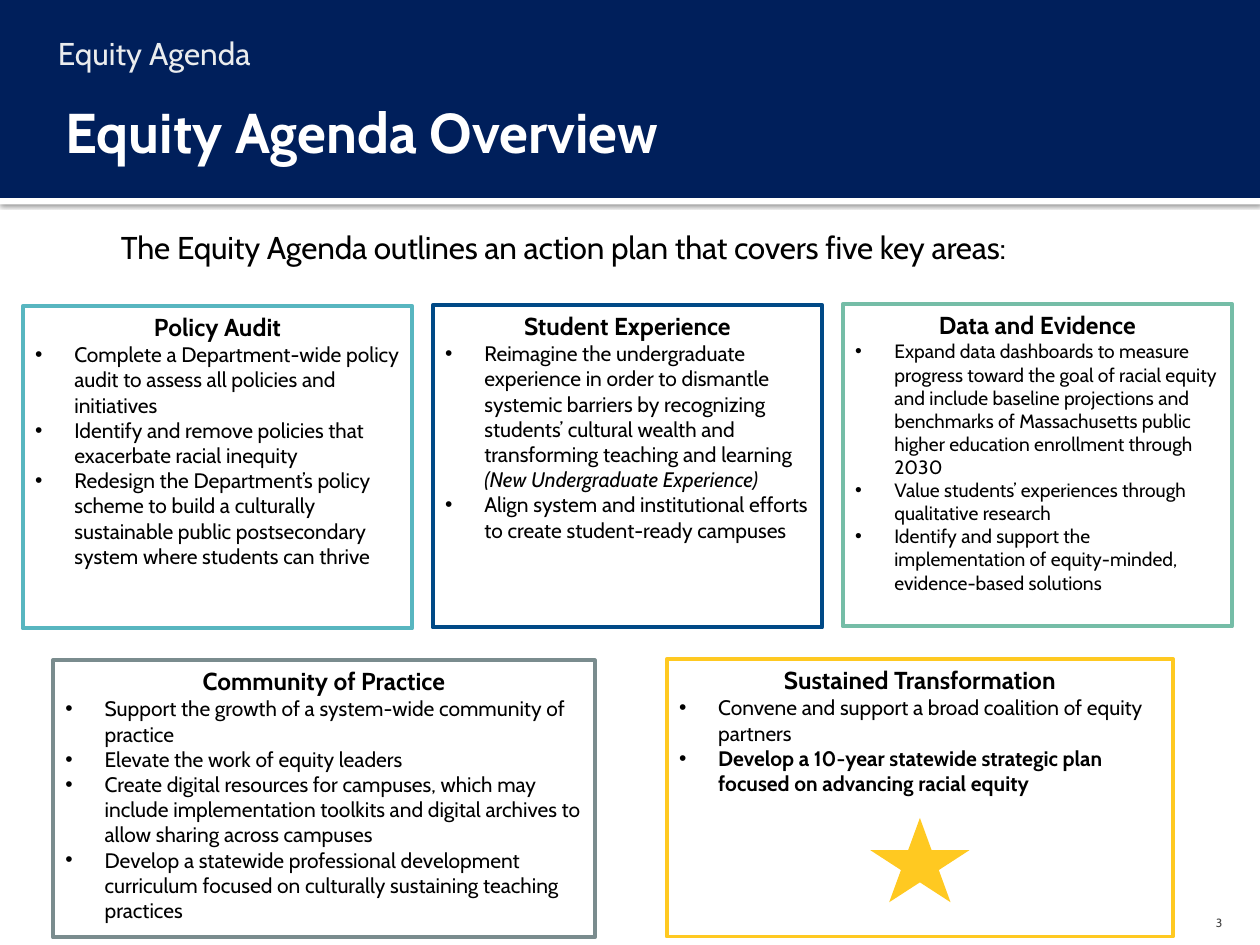
import dataclasses

import pptx
import pptx.dml.color
import pptx.enum.shapes
import pptx.enum.text
import pptx.oxml
import pptx.oxml.ns
import pptx.util

Cm = pptx.util.Cm
Pt = pptx.util.Pt
Shape = pptx.enum.shapes.MSO_SHAPE
Align = pptx.enum.text.PP_ALIGN
Anchor = pptx.enum.text.MSO_ANCHOR


@dataclasses.dataclass(frozen=True)
class Theme:
    """Colours, font and type sizes of the slide."""
    font: str = "Cabin"
    navy: str = "001F5B"
    white: str = "FFFFFF"
    black: str = "000000"
    pale: str = "EAECEE"
    dark: str = "454545"
    teal: str = "58B6C0"
    blue: str = "004986"
    green: str = "75BDA7"
    gray: str = "7A8C8E"
    gold: str = "FFC921"
    title: float = 32
    lead: float = 18
    head: float = 14
    body: float = 12
    small: float = 11
    tiny: float = 6.8


THEME = Theme()


def rgb(code):
    """Turn a hex code into a colour."""
    return pptx.dml.color.RGBColor.from_string(code)


def make(tag, parent, **attrs):
    """Add a drawing element with attributes to a parent."""
    node = parent.makeelement(pptx.oxml.ns.qn(tag), attrs)
    parent.append(node)
    return node


def write(frame, text, size=THEME.body, color=THEME.black, bold=False,
          italic=False, align=Align.LEFT, bullet=False, indent=0, before=0,
          space=0, join=False):
    """Add text to a frame as a new paragraph, or join it to the last one."""
    para = frame.paragraphs[-1]
    if para.runs and not join:
        para = frame.add_paragraph()
    if not join:
        para.alignment = align
        para.space_before = Pt(before)
        props = para._p.get_or_add_pPr()
        props.set("marL", str(Cm(0.79 if bullet else indent)))
        props.set("indent", str(Cm(-0.79 if bullet else 0)))
        if bullet:
            make("a:buFont", props, typeface="Arial")
            make("a:buChar", props, char="•")
    run = para.add_run()
    run.text = text
    font = run.font
    font.name, font.size = THEME.font, Pt(size)
    font.bold, font.italic = bold, italic
    font.color.rgb = rgb(color)
    if space:
        run._r.get_or_add_rPr().set("spc", str(round(space * 100)))


def shape(slide, kind, box, fill=None, line=None):
    """Draw a preset shape with a flat fill or an outline."""
    item = slide.shapes.add_shape(kind, *map(Cm, box))
    item.shadow.inherit = False
    if fill:
        item.fill.solid()
        item.fill.fore_color.rgb = rgb(fill)
    else:
        item.fill.background()
    if line:
        item.line.color.rgb = rgb(line)
        item.line.width = Pt(2.25)
    else:
        item.line.fill.background()
    return item


def label(slide, box, text, inset=(0.15, 0.25, 0.25, 0.13),
          anchor=Anchor.TOP, **form):
    """Place one line of text in its own box."""
    frame = slide.shapes.add_textbox(*map(Cm, box)).text_frame
    frame.word_wrap = True
    frame.vertical_anchor = anchor
    (frame.margin_left, frame.margin_top,
     frame.margin_right, frame.margin_bottom) = map(Cm, inset)
    write(frame, text, **form)


def banner(slide, box):
    """Draw the top band with its shadowed rule, section name and title."""
    left, top, width, height = box
    rule = shape(slide, Shape.RECTANGLE, (left, top + height, width, 0.13), THEME.white)
    effect = rule._element.spPr.find(pptx.oxml.ns.qn("a:effectLst"))
    cast = make("a:outerShdw", effect, blurRad=str(Pt(2.5)), dist=str(Pt(0.8)),
                dir="5400000", rotWithShape="0")
    make("a:alpha", make("a:srgbClr", cast, val=THEME.black), val="60000")
    shape(slide, Shape.RECTANGLE, box, THEME.navy)
    label(slide, (left + 0.84, top + 0.43, width - 1.68, 1.27), "Equity Agenda",
          size=THEME.lead, color=THEME.pale, indent=0.18)
    label(slide, (left + 1.07, top + 1.47, width - 2.11, 2.34),
          "Equity Agenda Overview", inset=(0.25, 0.13, 0.13, 0.13),
          anchor=Anchor.MIDDLE, size=THEME.title, color=THEME.white, bold=True)


def card(slide, box, head, items, color, size=THEME.body):
    """Draw an outlined card with a heading and bullets."""
    frame = shape(slide, Shape.RECTANGLE, box, line=color).text_frame
    frame.word_wrap = True
    frame.vertical_anchor = Anchor.TOP
    write(frame, head, size=THEME.head, bold=True, align=Align.CENTER)
    for item in items:
        text, form, *tail = item if isinstance(item, tuple) else (item, {})
        write(frame, text, size=size, bullet=True, **form)
        for more in tail:
            write(frame, more, size=size, italic=True, join=True)


def upper(slide, box):
    """Place the three equal cards of the upper row."""
    left, top, width, height = box
    cards = [
        ("Policy Audit", [
            "Complete a Department-wide policy audit to assess all policies and initiatives",
            "Identify and remove policies that exacerbate racial inequity",
            "Redesign the Department’s policy scheme to build a culturally "
            "sustainable public postsecondary system where students can thrive",
        ], THEME.teal, THEME.body),
        ("Student Experience", [
            ("Reimagine the undergraduate experience in order to dismantle systemic "
             "barriers by recognizing students’ cultural wealth and transforming "
             "teaching and learning ", {}, "(New Undergraduate Experience)"),
            "Align system and institutional efforts to create student-ready campuses",
        ], THEME.blue, THEME.body),
        ("Data and Evidence", [
            "Expand data dashboards to measure progress toward the goal of racial "
            "equity and include baseline projections and benchmarks of Massachusetts "
            "public higher education enrollment through 2030",
            "Value students’ experiences through qualitative research",
            "Identify and support the implementation of equity-minded, "
            "evidence-based solutions",
        ], THEME.green, THEME.small),
    ]
    wide = 7.85
    step = (width - wide) / (len(cards) - 1)
    for place, (head, items, color, size) in enumerate(cards):
        spot = (left + place * step, top - place * 0.02, wide, height)
        card(slide, spot, head, items, color, size)


def lower(slide, box):
    """Place the two cards of the lower row and the star."""
    left, top, width, height = box
    card(slide, (left, top, 10.92, height), "Community of Practice", [
        "Support the growth of a system-wide community of practice",
        "Elevate the work of equity leaders",
        "Create digital resources for campuses, which may include implementation "
        "toolkits and digital archives to allow sharing across campuses",
        "Develop a statewide professional development curriculum focused on "
        "culturally sustaining teaching practices",
    ], THEME.gray)
    wide = 10.21
    start = left + width - wide
    card(slide, (start, top - 0.02, wide, height), "Sustained Transformation", [
        "Convene and support a broad coalition of equity partners",
        ("Develop a 10-year statewide strategic plan focused on advancing "
         "racial equity", {"bold": True}),
    ], THEME.gold)
    shape(slide, Shape.STAR_5_POINT,
          (start + (wide - 2) / 2, top + 3.18, 2, 1.7), THEME.gold)


def main():
    """Build and save the slide."""
    deck = pptx.Presentation()
    deck.slide_width, deck.slide_height = Cm(25.4), Cm(19.05)
    slide = deck.slides.add_slide(deck.slide_layouts[6])
    banner(slide, (0, 0, 25.4, 3.99))
    label(slide, (2.11, 4.34, 19.63, 1.3),
          "The Equity Agenda outlines an action plan that covers five key areas:",
          size=THEME.lead, indent=0.18, before=6.8, space=-0.1)
    upper(slide, (0.46, 6.17, 24.38, 6.5))
    lower(slide, (1.07, 13.31, 22.58, 5.59))
    label(slide, (22.86, 17.98, 2.03, 0.76), "3", inset=(0.25, 0.13, 0.25, 0),
          anchor=Anchor.BOTTOM, size=THEME.tiny, color=THEME.dark, align=Align.RIGHT)
    deck.save("out.pptx")


if __name__ == "__main__":
    main()
